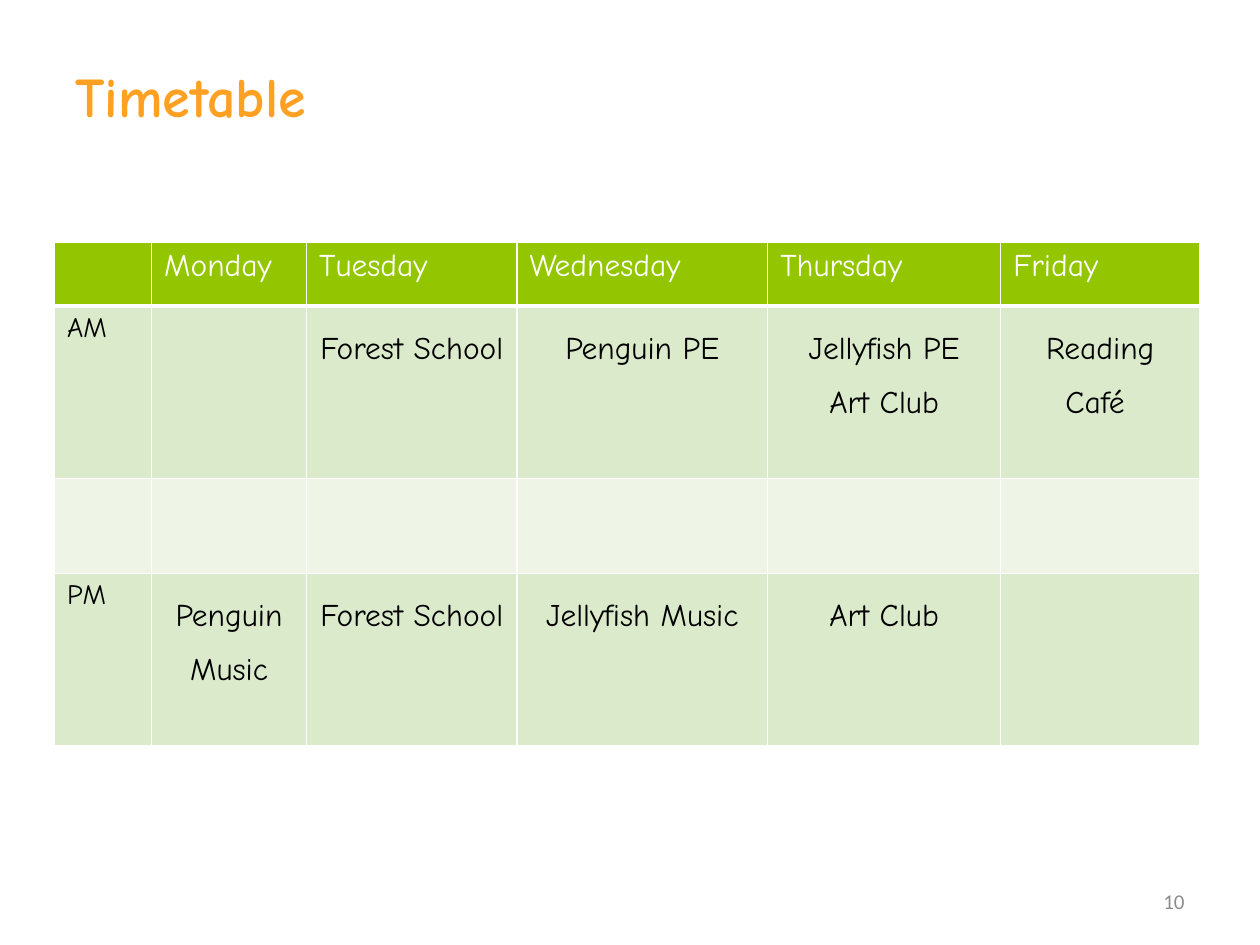
from lxml import etree
from pptx import Presentation
from pptx.dml.color import RGBColor
from pptx.enum.text import MSO_ANCHOR, PP_ALIGN
from pptx.oxml.ns import qn
from pptx.util import Pt

LEFT, CENTER, RIGHT = PP_ALIGN.LEFT, PP_ALIGN.CENTER, PP_ALIGN.RIGHT
BOTTOM, MIDDLE = MSO_ANCHOR.BOTTOM, MSO_ANCHOR.MIDDLE
FACE = "Comic Neue"
WHITE, BLACK = "FFFFFF", "000000"
COLS = [55.44, 88.56, 120.24, 143.28, 133.2, 113.76]
ROWS = [36.72, 98.64, 54, 98.64]
FILLS = ["94C600", "DCEACC", "EEF5E7", "DCEACC"]
PLAN = [
    ["", "Monday", "Tuesday", "Wednesday", "Thursday", "Friday"],
    ["AM", "", "Forest School", "Penguin PE", "Jellyfish PE\nArt Club", "Reading Café "],
    [""] * 6,
    ["PM", "Penguin Music", "Forest School ", "Jellyfish Music", "Art Club", ""],
]


def color(code):
    """Turn a hex string into a colour."""
    return RGBColor.from_string(code)


def write(frame, text, size, code, face=FACE, align=LEFT, bold=False, lead=None):
    """Fill a text frame and style its paragraphs."""
    frame.text = text
    for para in frame.paragraphs:
        para.alignment = align
        para.line_spacing = lead
        font = para.font
        font.name, font.size, font.bold = face, Pt(size), bold
        font.color.rgb = color(code)


def add_text(slide, box, text, anchor, *style, **more):
    """Add a wrapped text box."""
    frame = slide.shapes.add_textbox(*map(Pt, box)).text_frame
    frame.word_wrap = True
    frame.vertical_anchor = anchor
    write(frame, text, *style, **more)


def add_edge(cell, side, width):
    """Draw one white border of a cell."""
    line = etree.Element(qn("a:" + side), w=str(Pt(width)))
    fill = etree.SubElement(line, qn("a:solidFill"))
    etree.SubElement(fill, qn("a:srgbClr"), val=WHITE)
    return line


def set_cell(cell, text, row, col):
    """Style one cell by its place in the timetable."""
    cell.fill.solid()
    cell.fill.fore_color.rgb = color(FILLS[row])
    if row == 0:
        write(cell.text_frame, text, 18, WHITE)
    elif col == 0:
        write(cell.text_frame, text, 16, BLACK)
    else:
        write(cell.text_frame, text, 18, BLACK, align=CENTER, lead=1.5)
    widths = {"lnL": 1, "lnR": 1, "lnT": 3 if row == 1 else 1, "lnB": 3 if row == 0 else 1}
    props = cell._tc.get_or_add_tcPr()
    for spot, (side, width) in enumerate(widths.items()):
        props.insert(spot, add_edge(cell, side, width))


def add_plan(slide, left, top):
    """Add the weekly timetable."""
    box = map(Pt, (left, top, sum(COLS), sum(ROWS)))
    table = slide.shapes.add_table(len(ROWS), len(COLS), *box).table
    for col, width in zip(table.columns, COLS):
        col.width = Pt(width)
    for row, height in zip(table.rows, ROWS):
        row.height = Pt(height)
    for row, texts in enumerate(PLAN):
        for col, text in enumerate(texts):
            set_cell(table.cell(row, col), text, row, col)


def main():
    """Build the timetable slide."""
    deck = Presentation()
    deck.slide_width, deck.slide_height = Pt(720), Pt(540)
    slide = deck.slides.add_slide(deck.slide_layouts[6])
    add_text(slide, (36, 21.6, 455.76, 55.44), "Timetable", BOTTOM, 32, "FEA022", bold=True)
    add_text(slide, (516, 500.5, 168, 28.75), "10", MIDDLE, 12, "8C8C8C", "Calibri", RIGHT)
    add_plan(slide, 31.2, 138.24)
    deck.save("out.pptx")


if __name__ == "__main__":
    main()
